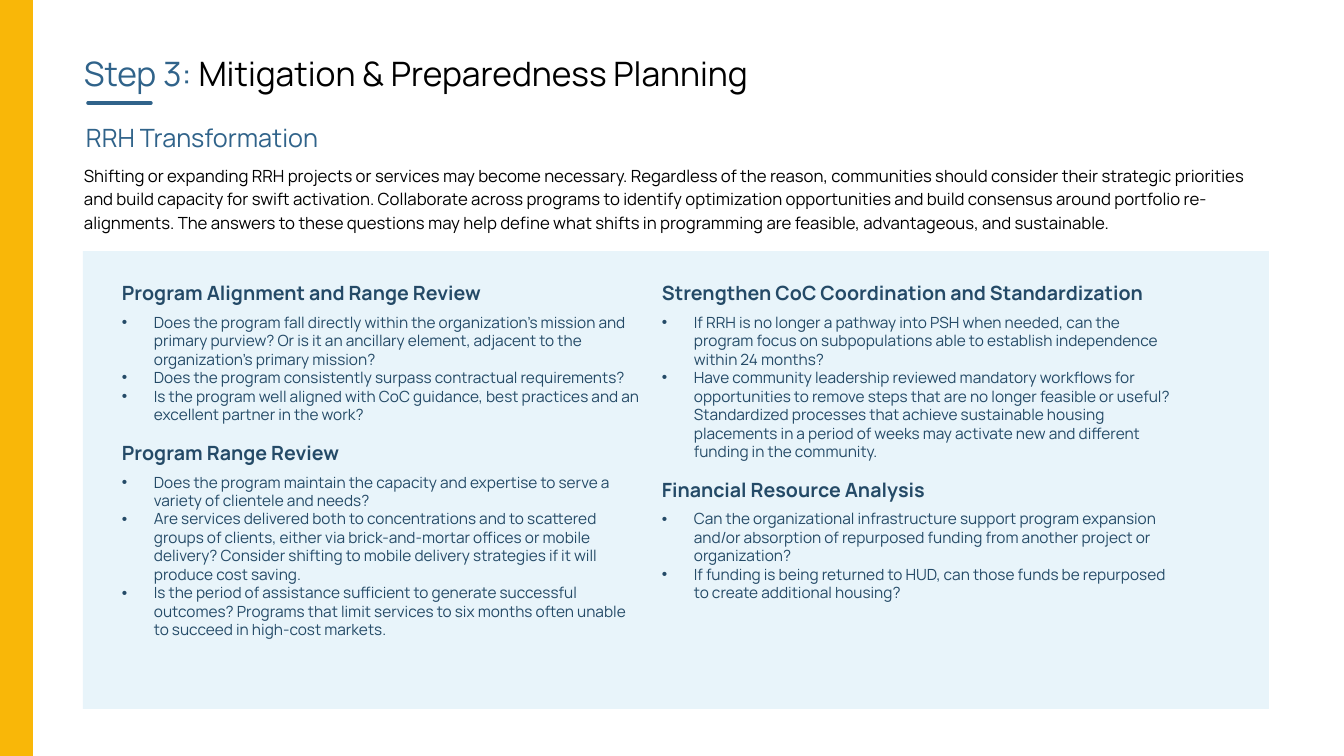
from dataclasses import dataclass

from lxml import etree
from pptx import Presentation
from pptx.dml.color import RGBColor
from pptx.enum import shapes, text
from pptx.oxml.ns import qn
from pptx.util import Pt

EMU_PER_PX = 914400 / 100.8


@dataclass(frozen=True)
class Theme:
    font: str = "Manrope"
    accent: str = "30638A"
    ink: str = "000000"
    navy: str = "244A67"
    panel: str = "E8F4FA"
    stripe: str = "F9B708"
    title: int = 24
    subtitle: int = 18
    heading: int = 14
    body: int = 12
    bullet: int = 11


THEME = Theme()

LEFT_TOPICS = [
    ("Program Alignment and Range Review", [
        "Does the program fall directly within the organization’s mission and primary purview? "
        "Or is it an ancillary element, adjacent to the organization’s primary mission?",
        "Does the program consistently surpass contractual requirements?",
        "Is the program well aligned with CoC guidance, best practices and an excellent partner "
        "in the work?",
    ]),
    ("Program Range Review", [
        "Does the program maintain the capacity and expertise to serve a variety of clientele "
        "and needs?",
        "Are services delivered both to concentrations and to scattered groups of clients, "
        "either via brick-and-mortar offices or mobile delivery? Consider shifting to mobile "
        "delivery strategies if it will produce cost saving.",
        "Is the period of assistance sufficient to generate successful outcomes? Programs that "
        "limit services to six months often unable to succeed in high-cost markets.",
    ]),
]
RIGHT_TOPICS = [
    ("Strengthen CoC Coordination and Standardization", [
        "If RRH is no longer a pathway into PSH when needed, can the program focus on "
        "subpopulations able to establish independence within 24 months?",
        "Have community leadership reviewed mandatory workflows for opportunities to remove "
        "steps that are no longer feasible or useful? Standardized processes that achieve "
        "sustainable housing placements in a period of weeks may activate new and different "
        "funding in the community.",
    ]),
    ("Financial Resource Analysis", [
        "Can the organizational infrastructure support program expansion and/or absorption of "
        "repurposed funding from another project or organization?",
        "If funding is being returned to HUD, can those funds be repurposed to create "
        "additional housing?",
    ]),
]
INTRO = (
    "Shifting or expanding RRH projects or services may become necessary. Regardless of the "
    "reason, communities should consider their strategic priorities and build capacity for "
    "swift activation. Collaborate across programs to identify optimization opportunities and "
    "build consensus around portfolio re-alignments. The answers to these questions may help "
    "define what shifts in programming are feasible, advantageous, and sustainable."
)


def px(length):
    return round(length * EMU_PER_PX)


def add_block(slide, box, color):
    block = slide.shapes.add_shape(shapes.MSO_SHAPE.RECTANGLE, *map(px, box))
    block.shadow.inherit = False
    block.fill.solid()
    block.fill.fore_color.rgb = RGBColor.from_string(color)
    block.line.fill.background()


def add_frame(slide, box):
    frame = slide.shapes.add_textbox(*map(px, box)).text_frame
    frame.word_wrap = True
    frame.vertical_anchor = text.MSO_ANCHOR.TOP
    return frame


def style(run, size, color, bold=False):
    run.font.name = THEME.font
    run.font.size = Pt(size)
    run.font.bold = bold
    run.font.color.rgb = RGBColor.from_string(color)


def add_bullet_mark(paragraph):
    props = paragraph._p.get_or_add_pPr()
    props.set("marL", str(px(32)))
    props.set("indent", str(-px(32)))
    etree.SubElement(props, qn("a:buFont")).set("typeface", "Arial")
    etree.SubElement(props, qn("a:buChar")).set("char", "•")


def add_title(slide, box):
    left, top, _, _ = box
    title = add_frame(slide, box).paragraphs[0]
    for words, color in (("Step 3: ", THEME.accent),
                         ("Mitigation & Preparedness Planning", THEME.ink)):
        run = title.add_run()
        run.text = words
        style(run, THEME.title, color)

    y = px(top + 55)
    underline = slide.shapes.add_connector(
        shapes.MSO_CONNECTOR.STRAIGHT, px(left + 14), y, px(left + 77), y)
    underline.line.color.rgb = RGBColor.from_string(THEME.accent)
    underline.line.width = Pt(2.5)
    line_props = underline._element.spPr
    line_props.find(qn("a:ln")).set("cap", "rnd")
    etree.SubElement(line_props, qn("a:effectLst"))


def add_statement(slide, box, words, size, color, line_spacing, space_after):
    statement = add_frame(slide, box).paragraphs[0]
    statement.text = words
    statement.line_spacing = line_spacing
    statement.space_after = Pt(space_after)
    style(statement.runs[0], size, color)


def add_topics(slide, box, topics):
    """Stack headings, each followed by its bulleted questions, in one column."""
    frame = add_frame(slide, box)
    paragraph = frame.paragraphs[0]
    for index, (heading, questions) in enumerate(topics):
        if index:
            paragraph = frame.add_paragraph()
        paragraph.text = heading
        paragraph.space_after = Pt(6)
        style(paragraph.runs[0], THEME.heading, THEME.navy, bold=True)
        for question in questions:
            paragraph = frame.add_paragraph()
            paragraph.text = question
            add_bullet_mark(paragraph)
            style(paragraph.runs[0], THEME.bullet, THEME.navy)
        paragraph.space_after = Pt(12)


def add_question_panel(slide, box):
    left, top, width, height = box
    add_block(slide, box, THEME.panel)
    for column, topics in enumerate((LEFT_TOPICS, RIGHT_TOPICS)):
        add_topics(slide, (left + 29 + column * 540, top + 25, 540, height - 48), topics)


def main():
    deck = Presentation()
    deck.slide_width, deck.slide_height = px(1344), px(756)
    slide = deck.slides.add_slide(deck.slide_layouts[6])
    add_block(slide, (0, 0, 33, 756), THEME.stripe)
    add_title(slide, (74, 48, 1248, 65))
    add_statement(slide, (76, 110, 672, 45), "RRH Transformation",
                  THEME.subtitle, THEME.accent, 1.25, 12)
    add_statement(slide, (74, 158, 1187, 82), INTRO, THEME.body, THEME.ink, 1.15, 6)
    add_question_panel(slide, (83, 251, 1186, 458))
    deck.save("out.pptx")


if __name__ == "__main__":
    main()
